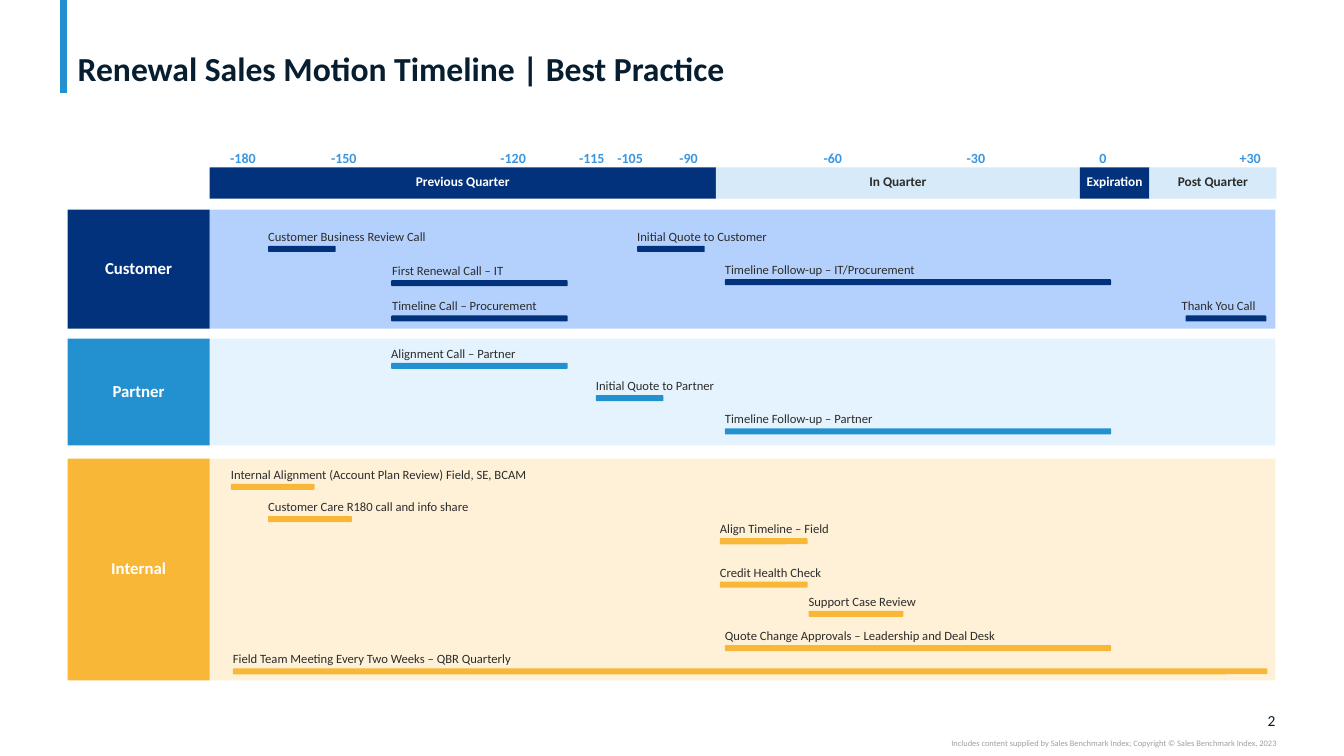
from dataclasses import dataclass

from lxml.etree import SubElement
from pptx import Presentation
from pptx.dml.color import RGBColor
from pptx.enum.shapes import MSO_CONNECTOR, MSO_SHAPE
from pptx.enum.text import MSO_ANCHOR, PP_ALIGN
from pptx.oxml.ns import qn
from pptx.util import Inches, Pt


@dataclass(frozen=True)
class Theme:
    font: str = "Calibri"
    ink: str = "071E31"
    text: str = "2C2C2B"
    white: str = "FFFFFF"
    grey: str = "A0A0A0"
    day: str = "3896E3"
    navy: str = "03327C"
    blue: str = "2391CF"
    amber: str = "F8B737"
    pale_navy: str = "B4D1FD"
    pale_blue: str = "E4F3FE"
    pale_amber: str = "FEF1D7"
    pale_phase: str = "D7EAF9"
    title_size: float = 24
    lane_size: float = 12
    number_size: float = 11
    day_size: float = 10
    phase_size: float = 9.5
    task_size: float = 9
    footer_size: float = 6


@dataclass(frozen=True)
class Phase:
    name: str
    left: float
    right: float
    fill: str
    color: str


@dataclass(frozen=True)
class Task:
    name: str
    left: float
    top: float
    width: float
    label_width: float
    label_shift: float = 0


@dataclass(frozen=True)
class Lane:
    name: str
    top: float
    height: float
    fill: str
    pale: str
    tasks: tuple[Task, ...]


T = Theme()
LANE_LEFT, CHART_LEFT, CHART_RIGHT = 0.67, 2.08, 12.65
PHASE_TOP, PHASE_HEIGHT = 1.66, 0.31
DAY_TOP, DAY_WIDTH, DAY_HEIGHT = 1.48, 0.36, 0.17
BAR_HEIGHT, LABEL_HEIGHT, LABEL_RISE = 0.06, 0.15, 0.17

DAYS = {"-180": 2.41, "-150": 3.41, "-120": 5.09, "-115": 5.87, "-105": 6.25,
        "-90": 6.83, "-60": 8.26, "-30": 9.68, "0": 10.94, "+30": 12.4}

PHASES = (
    Phase("Previous Quarter", 2.08, 7.1, T.navy, T.white),
    Phase("In Quarter", 7.1, 10.71, T.pale_phase, T.text),
    Phase("Expiration", 10.71, 11.4, T.navy, T.white),
    Phase("Post Quarter", 11.4, 12.66, T.pale_phase, T.text),
)

LANES = (
    Lane("Customer", 2.08, 1.18, T.navy, T.pale_navy, (
        Task("Customer Business Review Call", 2.66, 2.44, 0.67, 2.43),
        Task("First Renewal Call – IT", 3.88, 2.78, 1.75, 1.23, 0.01),
        Task("Timeline Call – Procurement", 3.88, 3.13, 1.75, 1.61, 0.01),
        Task("Initial Quote to Customer", 6.32, 2.44, 0.67, 1.46),
        Task("Timeline Follow-up – IT/Procurement", 7.19, 2.77, 3.83, 3.07),
        Task("Thank You Call", 11.76, 3.13, 0.8, 0.86, -0.04),
    )),
    Lane("Partner", 3.36, 1.06, T.blue, T.pale_blue, (
        Task("Alignment Call – Partner", 3.88, 3.6, 1.75, 1.39),
        Task("Initial Quote to Partner", 5.91, 3.92, 0.67, 1.31),
        Task("Timeline Follow-up – Partner", 7.19, 4.25, 3.83, 3.07),
    )),
    Lane("Internal", 4.55, 2.2, T.amber, T.pale_amber, (
        Task("Internal Alignment (Account Plan Review) Field, SE, BCAM", 2.29, 4.8, 0.83, 3.34),
        Task("Customer Care R180 call and info share", 2.66, 5.12, 0.83, 2.28),
        Task("Align Timeline – Field", 7.14, 5.34, 0.87, 1.23),
        Task("Credit Health Check", 7.14, 5.77, 0.87, 1.16),
        Task("Support Case Review", 8.02, 6.06, 0.94, 1.23),
        Task("Quote Change Approvals – Leadership and Deal Desk", 7.19, 6.4, 3.83, 3.11),
        Task("Field Team Meeting Every Two Weeks – QBR Quarterly", 2.31, 6.63, 10.26, 3.15),
    )),
)


def write(sp, text: str, *, size: float, color: str, bold: bool = False,
          align=PP_ALIGN.LEFT, anchor=MSO_ANCHOR.MIDDLE, spacing: float = 1.0,
          inset: float = 0) -> None:
    tf = sp.text_frame
    tf.word_wrap = True
    tf.vertical_anchor = anchor
    tf.margin_left = tf.margin_right = Inches(inset)
    tf.margin_top = tf.margin_bottom = 0
    p = tf.paragraphs[0]
    p.alignment = align
    p.line_spacing = spacing
    r = p.add_run()
    r.text = text
    r.font.name = T.font
    r.font.size = Pt(size)
    r.font.bold = bold
    r.font.color.rgb = RGBColor.from_string(color)


def add_block(s, left: float, top: float, width: float, height: float, fill: str,
              kind=MSO_SHAPE.RECTANGLE):
    sp = s.shapes.add_shape(kind, Inches(left), Inches(top), Inches(width), Inches(height))
    sp.shadow.inherit = False
    sp.fill.solid()
    sp.fill.fore_color.rgb = RGBColor.from_string(fill)
    sp.line.fill.background()
    return sp


def add_text(s, left: float, top: float, width: float, height: float, text: str, **style) -> None:
    sp = s.shapes.add_textbox(Inches(left), Inches(top), Inches(width), Inches(height))
    write(sp, text, **style)


def add_frame(s) -> None:
    accent = s.shapes.add_connector(MSO_CONNECTOR.STRAIGHT, Inches(0.63), 0,
                                    Inches(0.63), Inches(0.92))
    accent.line.color.rgb = RGBColor.from_string(T.blue)
    accent.line.width = Pt(5)
    SubElement(accent._element.spPr, qn("a:effectLst"))
    title = s.shapes.title
    title.left, title.top = Inches(0.67), Inches(0.04)
    title.width, title.height = Inches(11.99), Inches(0.84)
    write(title, "Renewal Sales Motion Timeline | Best Practice", size=T.title_size,
          color=T.ink, bold=True, anchor=MSO_ANCHOR.BOTTOM, spacing=0.9, inset=0.1)
    add_text(s, 12.32, 7.05, 0.33, 0.19, "2", size=T.number_size, color=T.ink,
             align=PP_ALIGN.RIGHT)
    add_text(s, 7.5, 7.32, 5.16, 0.1,
             "Includes content supplied by Sales Benchmark Index; "
             "Copyright © Sales Benchmark Index, 2023",
             size=T.footer_size, color=T.grey, align=PP_ALIGN.RIGHT, anchor=MSO_ANCHOR.TOP)


def add_phase(s, phase: Phase) -> None:
    sp = add_block(s, phase.left, PHASE_TOP, phase.right - phase.left, PHASE_HEIGHT, phase.fill)
    write(sp, phase.name, size=T.phase_size, color=phase.color, bold=True,
          align=PP_ALIGN.CENTER, spacing=0.8)


def add_lane(s, lane: Lane) -> None:
    add_block(s, CHART_LEFT, lane.top, CHART_RIGHT - CHART_LEFT, lane.height, lane.pale)
    head = add_block(s, LANE_LEFT, lane.top, CHART_LEFT - LANE_LEFT, lane.height, lane.fill)
    write(head, lane.name, size=T.lane_size, color=T.white, bold=True,
          align=PP_ALIGN.CENTER, spacing=0.9)
    for task in lane.tasks:
        add_block(s, task.left, task.top, task.width, BAR_HEIGHT, lane.fill,
                  MSO_SHAPE.ROUNDED_RECTANGLE)
        add_text(s, task.left + task.label_shift, task.top - LABEL_RISE, task.label_width,
                 LABEL_HEIGHT, task.name, size=T.task_size, color=T.text)


def main() -> None:
    prs = Presentation()
    prs.slide_width, prs.slide_height = Inches(13.33), Inches(7.5)
    s = prs.slides.add_slide(prs.slide_layouts[5])
    add_frame(s)
    for phase in PHASES:
        add_phase(s, phase)
    for day, center in DAYS.items():
        add_text(s, center - DAY_WIDTH / 2, DAY_TOP, DAY_WIDTH, DAY_HEIGHT, day,
                 size=T.day_size, color=T.day, bold=True, align=PP_ALIGN.CENTER,
                 anchor=MSO_ANCHOR.BOTTOM)
    for lane in LANES:
        add_lane(s, lane)
    prs.save("out.pptx")


if __name__ == "__main__":
    main()
